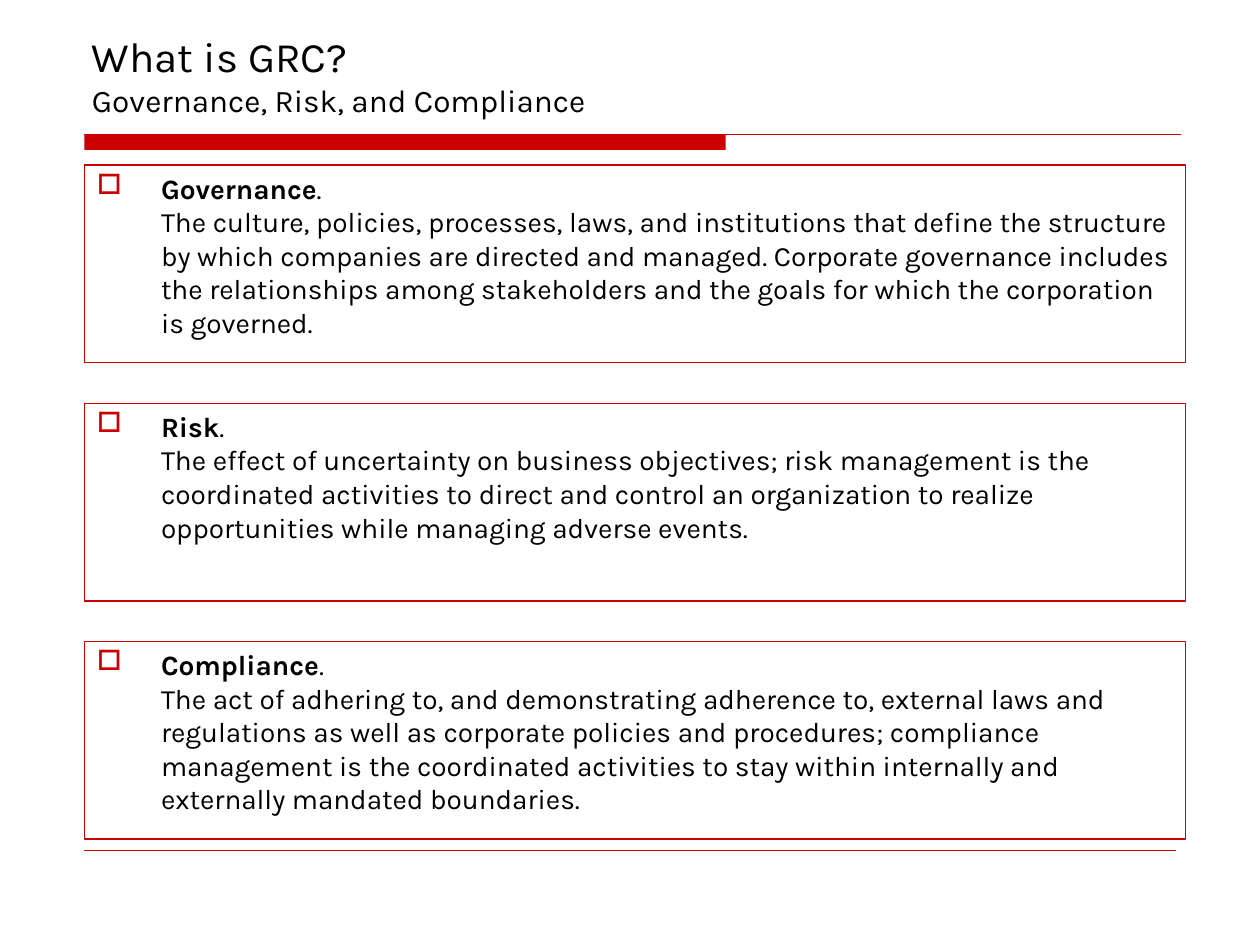
from lxml.etree import SubElement as Sub
from pptx import Presentation
from pptx.dml.color import RGBColor as RGB
from pptx.enum.shapes import MSO_CONNECTOR as Link, MSO_SHAPE as Kind
from pptx.enum.text import MSO_ANCHOR as Anchor, MSO_AUTO_SIZE as Fit, PP_ALIGN as Align
from pptx.oxml.ns import qn
from pptx.util import Inches, Pt

theme = {
    "font": "Karla",
    "red": RGB(0xCC, 0, 0),
    "ink": RGB(0, 0, 0),
    "title": 24,
    "sub": 18,
    "body": 16,
}

deck = Presentation()
deck.slide_width, deck.slide_height = Inches(10), Inches(7.5)
wide, high = deck.slide_width, deck.slide_height
slide = deck.slides.add_slide(deck.slide_layouts[5])
shapes = slide.shapes

left = int(wide * 0.067)
full = int(wide * 0.874)
top = Inches(1.31)
tall = Inches(1.57)
step = Inches(1.89)
hang = Inches(0.51)


def style(run, size, bold=False):
    font = run.font
    font.name, font.size, font.bold = theme["font"], Pt(size), bold
    font.color.rgb = theme["ink"]


def rule(y, end, width):
    line = shapes.add_connector(Link.STRAIGHT, left, y, end, y)
    line.line.color.rgb = theme["red"]
    line.line.width = Pt(width)
    Sub(line._element.spPr, qn("a:effectLst"))


bar_y = Inches(1.07)
bar = shapes.add_shape(Kind.RECTANGLE, left, bar_y, Inches(5.09), Inches(0.12))
bar.shadow.inherit = False
bar.fill.solid()
bar.fill.fore_color.rgb = theme["red"]
bar.line.fill.background()
rule(bar_y, int(wide * 0.937), 0.75)
rule(int(high * 0.9), int(wide * 0.933), 0.25)

title = shapes.title
title.left, title.top = Inches(0.63), Inches(0.33)
title.width, title.height = Inches(8.75), Inches(0.66)
frame = title.text_frame
frame.text = "What is GRC?\vGovernance, Risk, and Compliance"
frame.word_wrap, frame.auto_size = True, Fit.NONE
frame.vertical_anchor = Anchor.BOTTOM
para = frame.paragraphs[0]
para.alignment = Align.LEFT
for run, size in zip(para.runs, (theme["title"], theme["sub"])):
    style(run, size)

terms = [
    ("Governance", "The culture, policies, processes, laws, and institutions that define the "
     "structure by which companies are directed and managed. Corporate governance includes the "
     "relationships among stakeholders and the goals for which the corporation is governed."),
    ("Risk", "The effect of uncertainty on business objectives; risk management is the "
     "coordinated activities to direct and control an organization to realize opportunities "
     "while managing adverse events."),
    ("Compliance", "The act of adhering to, and demonstrating adherence to, external laws and "
     "regulations as well as corporate policies and procedures; compliance management is the "
     "coordinated activities to stay within internally and externally mandated boundaries."),
]

for row, (term, text) in enumerate(terms):
    box = shapes.add_shape(Kind.RECTANGLE, left, top + row * step, full, tall)
    box.shadow.inherit = False
    box.fill.background()
    box.line.color.rgb = theme["red"]
    box.line.width = Pt(0.75)
    frame = box.text_frame
    frame.word_wrap = True
    frame.vertical_anchor = Anchor.TOP
    para = frame.paragraphs[0]
    para.alignment = Align.LEFT
    props = para._p.get_or_add_pPr()
    props.set("marL", str(hang))
    props.set("indent", str(-hang))
    Sub(Sub(props, qn("a:buClr")), qn("a:srgbClr"), val=str(theme["red"]))
    Sub(props, qn("a:buChar"), char="□")
    head = para.add_run()
    head.text = term
    style(head, theme["body"], True)
    dot = para.add_run()
    dot.text = "."
    style(dot, theme["body"])
    para.add_line_break()
    body = para.add_run()
    body.text = text
    style(body, theme["body"])

deck.save("out.pptx")
